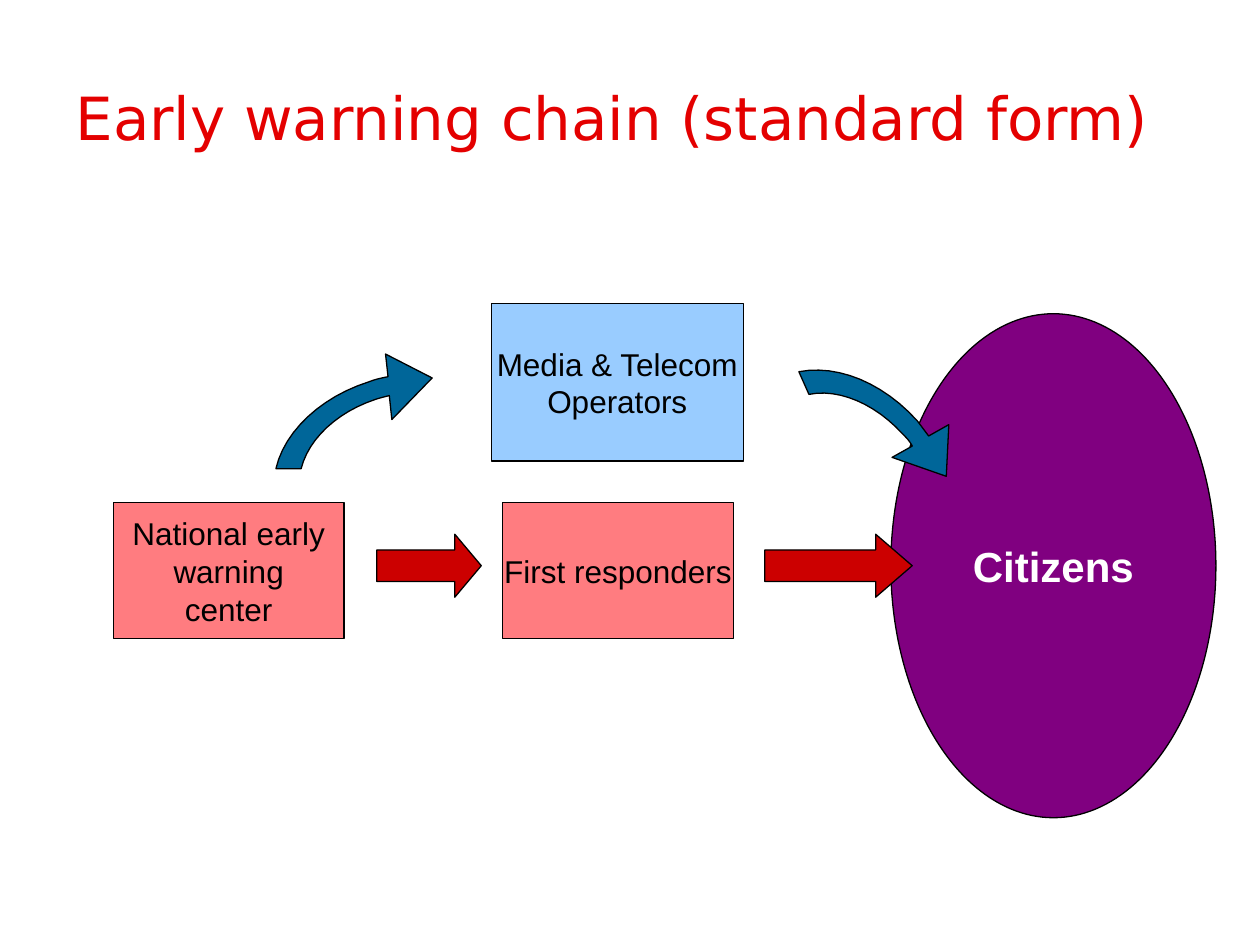
from pptx import Presentation
from pptx.dml.color import RGBColor
from pptx.enum.shapes import MSO_SHAPE
from pptx.enum.text import MSO_ANCHOR, MSO_AUTO_SIZE, PP_ALIGN
from pptx.util import Inches, Pt

RECT = MSO_SHAPE.RECTANGLE
OVAL = MSO_SHAPE.OVAL
ARROW = MSO_SHAPE.RIGHT_ARROW
MIDDLE = MSO_ANCHOR.MIDDLE
NO_FIT = MSO_AUTO_SIZE.NONE
LEFT, CENTER = PP_ALIGN.LEFT, PP_ALIGN.CENTER

COLORS = {
    "title": "E40000",
    "pink": "FF7C80",
    "sky": "99CCFF",
    "purple": "800080",
    "red": "CC0000",
    "blue": "006699",
    "black": "000000",
    "white": "FFFFFF",
}
STEPS = 12

RISE = [
    (3.09, 3.14),
    (3.05, 3.15, 3.01, 3.16, 2.98, 3.17),
    (2.68, 3.27, 2.45, 3.48, 2.39, 3.72),
    (2.19, 3.72),
    (2.26, 3.42, 2.55, 3.15, 2.93, 3.03),
    (2.98, 3.01, 3.03, 3.00, 3.08, 2.99),
    (3.06, 2.81), (3.43, 3.00), (3.11, 3.33),
]
FALL = [
    (7.24, 3.54),
    (7.22, 3.50, 7.19, 3.47, 7.16, 3.44),
    (6.95, 3.21, 6.66, 3.08, 6.42, 3.13),
    (6.34, 2.95),
    (6.65, 2.89, 7.01, 3.04, 7.28, 3.34),
    (7.31, 3.38, 7.34, 3.42, 7.37, 3.46),
    (7.53, 3.37), (7.51, 3.78), (7.08, 3.63),
]


def color(name):
    return RGBColor.from_string(COLORS[name])


def paint(shape, fill):
    shape.shadow.inherit = False
    shape.fill.solid()
    shape.fill.fore_color.rgb = color(fill)
    shape.line.color.rgb = color("black")
    shape.line.width = Pt(0.75)


def style(par, size, ink, face="Arial", bold=False, align=CENTER):
    par.alignment = align
    par.font.size = Pt(size)
    par.font.name = face
    par.font.bold = bold
    par.font.color.rgb = color(ink)


def add_title(slide, text):
    title = slide.shapes.title
    title.left, title.top = Inches(0.5), Inches(0.3)
    title.width, title.height = Inches(9), Inches(1.25)
    frame = title.text_frame
    frame.text = text
    frame.auto_size = NO_FIT
    frame.vertical_anchor = MIDDLE
    style(frame.paragraphs[0], 34, "title", "DejaVu Sans", align=LEFT)


def add_form(slide, kind, box, fill):
    shape = slide.shapes.add_shape(kind, *map(Inches, box))
    paint(shape, fill)
    return shape


def add_node(slide, kind, box, fill, text, wrap=False,
             size=18, ink="black", bold=False):
    frame = add_form(slide, kind, box, fill).text_frame
    frame.text = text
    frame.word_wrap = wrap
    frame.vertical_anchor = MIDDLE
    for par in frame.paragraphs:
        style(par, size, ink, bold=bold)


def add_arrow(slide, left, width, head):
    shape = add_form(slide, ARROW, (left, 4.24, width, 0.5), "red")
    shape.adjustments[0] = 0.5
    shape.adjustments[1] = head


def bend(start, curve):
    knots = [start, curve[:2], curve[2:4], curve[4:]]
    for step in range(1, STEPS + 1):
        t = step / STEPS
        u = 1 - t
        parts = (u ** 3, 3 * u * u * t, 3 * u * t * t, t ** 3)
        yield tuple(sum(w * k[axis] for w, k in zip(parts, knots))
                    for axis in (0, 1))


def add_swoop(slide, outline):
    points = [outline[0]]
    for part in outline[1:]:
        points += bend(points[-1], part) if len(part) == 6 else [part]
    spots = [(Inches(x), Inches(y)) for x, y in points]
    pen = slide.shapes.build_freeform(*spots[0])
    pen.add_line_segments(spots[1:], close=True)
    paint(pen.convert_to_shape(), "blue")


def main():
    deck = Presentation()
    deck.slide_width, deck.slide_height = Inches(10), Inches(7.5)
    slide = deck.slides.add_slide(deck.slide_layouts[5])
    add_title(slide, "Early warning chain (standard form)")
    add_node(slide, OVAL, (7.07, 2.49, 2.58, 4), "purple", "Citizens",
             size=24, ink="white", bold=True)
    add_node(slide, RECT, (0.9, 3.99, 1.83, 1.08), "pink",
             "National early warning center", wrap=True)
    add_node(slide, RECT, (3.99, 3.99, 1.83, 1.08), "pink",
             "First responders")
    add_node(slide, RECT, (3.9, 2.41, 2, 1.25), "sky",
             "Media & Telecom\nOperators")
    add_arrow(slide, 2.99, 0.83, 0.42)
    add_arrow(slide, 6.07, 1.17, 0.58)
    for outline in (RISE, FALL):
        add_swoop(slide, outline)
    deck.save("out.pptx")


if __name__ == "__main__":
    main()
